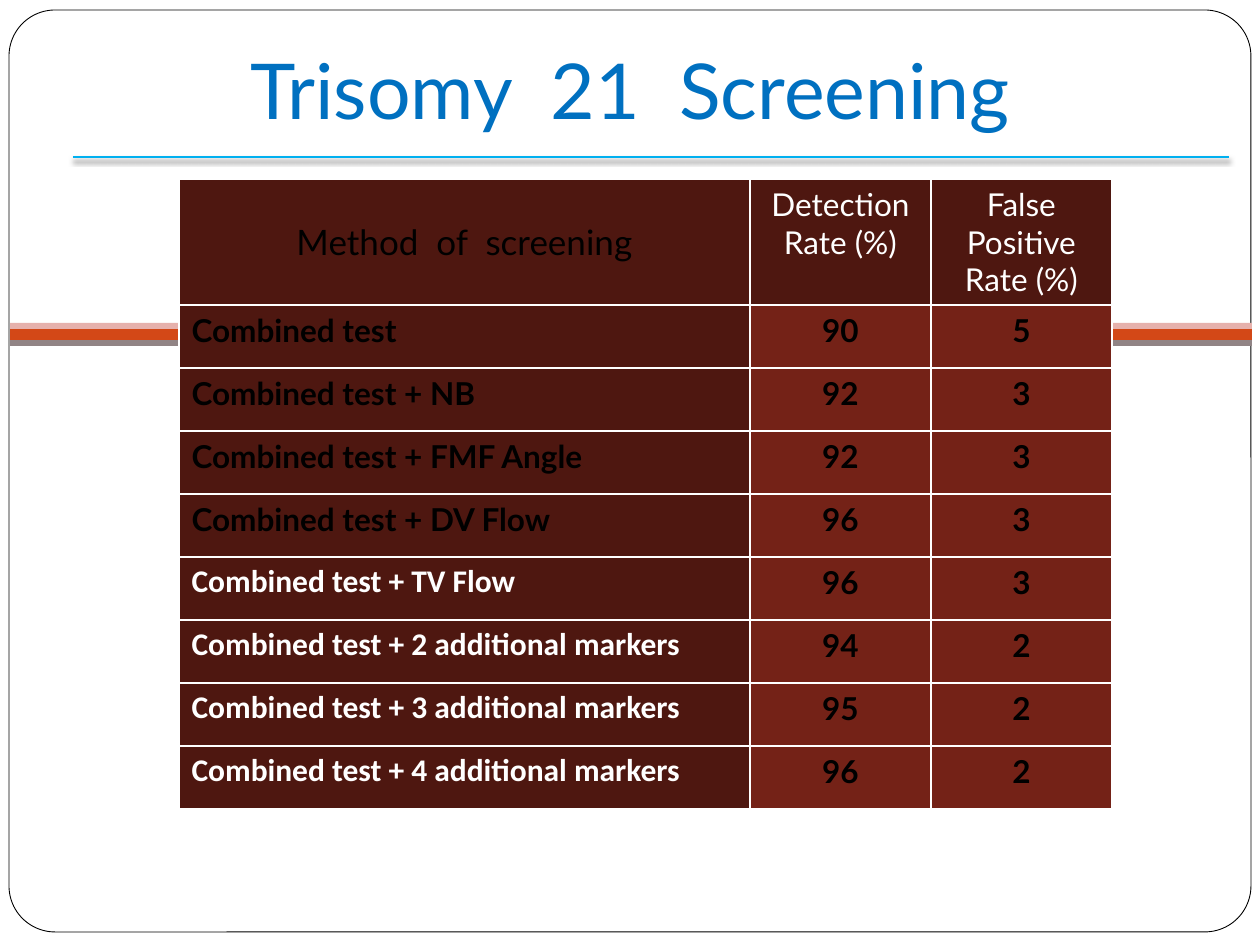
import pptx
import pptx.dml.color
import pptx.enum.shapes
import pptx.enum.text
import pptx.oxml
import pptx.oxml.ns
import pptx.util

RGBColor = pptx.dml.color.RGBColor
Pt = pptx.util.Pt
SHAPE = pptx.enum.shapes.MSO_SHAPE
ALIGN = pptx.enum.text.PP_ALIGN
ANCHOR = pptx.enum.text.MSO_ANCHOR

BLACK = RGBColor(0x00, 0x00, 0x00)
WHITE = RGBColor(0xFF, 0xFF, 0xFF)
BLUE = RGBColor(0x00, 0x70, 0xC0)
SKY = RGBColor(0x00, 0xB0, 0xF0)
ORANGE = RGBColor(0xD3, 0x48, 0x17)
PINK = RGBColor(0xE6, 0xB1, 0xAC)
GREY = RGBColor(0x91, 0x84, 0x85)
DARK = RGBColor(0x4E, 0x17, 0x10)
BROWN = RGBColor(0x74, 0x22, 0x17)

EMU_PER_PX = 914400 / 126
NS = pptx.oxml.ns.nsdecls("a")
SHADOW = (f'<a:effectLst {NS}><a:outerShdw blurRad="38100" dist="25400" dir="5400000" '
          'rotWithShape="0"><a:srgbClr val="000000"><a:alpha val="50000"/></a:srgbClr>'
          '</a:outerShdw></a:effectLst>')

TITLE = {"size": Pt(44), "name": "Lato", "bold": False, "color": BLUE}
HEADING = {"size": Pt(18), "name": "Lato", "bold": False, "color": WHITE}
FIRST_HEADING = {**HEADING, "size": Pt(20), "color": BLACK}
BODY = {**HEADING, "bold": True, "color": BLACK}
MARKER = {**BODY, "name": "Calibri", "color": WHITE}
CENTER = {"alignment": ALIGN.CENTER}
LEFT = {"alignment": ALIGN.LEFT}
TIGHT = {**LEFT, "line_spacing": 0.95, "space_after": Pt(0.7)}

HEADINGS = ["Method  of  screening", "Detection Rate (%)", "False Positive Rate (%)"]
RESULTS = [
    ("Combined test", 90, 5),
    ("Combined test + NB", 92, 3),
    ("Combined test + FMF Angle", 92, 3),
    ("Combined test + DV Flow", 96, 3),
    ("Combined test + TV Flow", 96, 3),
    ("Combined test + 2 additional markers", 94, 2),
    ("Combined test + 3 additional markers", 95, 2),
    ("Combined test + 4 additional markers", 96, 2),
]
FIRST_MARKER_ROW = 4


def px(n):
    return pptx.util.Emu(round(n * EMU_PER_PX))


class SlideBuilder:
    def __init__(self, prs):
        self.s = prs.slides.add_slide(prs.slide_layouts[5])

    def text(self, tf, text, font, paragraph):
        p = tf.paragraphs[0]
        for name, value in paragraph.items():
            setattr(p, name, value)
        r = p.add_run()
        r.text = text
        for name, value in font.items():
            if name == "color":
                r.font.color.rgb = value
            else:
                setattr(r.font, name, value)

    def shape(self, kind, box, fill, line=None):
        sp = self.s.shapes.add_shape(kind, *map(px, box))
        sp.shadow.inherit = False
        sp.fill.solid()
        sp.fill.fore_color.rgb = fill
        if line is None:
            sp.line.fill.background()
        else:
            sp.line.color.rgb = line
            sp.line.width = Pt(0.5)
        return sp

    def rule(self, x1, x2, y):
        line = self.s.shapes.add_connector(
            pptx.enum.shapes.MSO_CONNECTOR.STRAIGHT, px(x1), px(y), px(x2), px(y))
        line.line.color.rgb = SKY
        line.line.width = Pt(1)
        line._element.spPr.append(pptx.oxml.parse_xml(SHADOW))

    def title(self, box, text):
        sp = self.s.shapes.title
        for name, value in zip(("left", "top", "width", "height"), box):
            setattr(sp, name, px(value))
        tf = sp.text_frame
        tf.auto_size = pptx.enum.text.MSO_AUTO_SIZE.NONE
        tf.vertical_anchor = ANCHOR.BOTTOM
        tf.margin_bottom = pptx.util.Inches(0.1)
        self.text(tf, text, TITLE, CENTER)
        # The placeholder comes first; lift it above the filled frame.
        self.s.shapes._spTree.append(sp._element)

    def cell(self, cell, text, fill, font, paragraph):
        cell.fill.solid()
        cell.fill.fore_color.rgb = fill
        self.text(cell.text_frame, str(text), font, paragraph)
        # Borders have to stand before the fill in tcPr.
        for i, side in enumerate(("lnL", "lnR", "lnT", "lnB")):
            cell._tc.tcPr.insert(i, pptx.oxml.parse_xml(
                f'<a:{side} {NS} w="12700"><a:solidFill><a:srgbClr val="{WHITE}"/>'
                f'</a:solidFill></a:{side}>'))

    def table(self, left, top, widths, heights):
        frame = self.s.shapes.add_table(
            len(heights), len(widths), px(left), px(top), px(sum(widths)), px(sum(heights)))
        table = frame.table
        for column, width in zip(table.columns, widths):
            column.width = px(width)
        for row, height in zip(table.rows, heights):
            row.height = px(height)
        return table


def main():
    prs = pptx.Presentation()
    prs.slide_width, prs.slide_height = px(1260), px(945)
    b = SlideBuilder(prs)

    frame = b.shape(SHAPE.ROUNDED_RECTANGLE, (9, 10, 1242, 922), WHITE, BLACK)
    frame.adjustments[0] = 0.05
    for top, height, color in ((328, 12, ORANGE), (323, 6, PINK), (340, 6, GREY)):
        b.shape(SHAPE.RECTANGLE, (10, top, 1242, height), color)
    b.rule(73, 1229, 157)
    b.title((53, -40, 1155, 188), "Trisomy  21  Screening")

    table = b.table(179, 179, [571, 181, 181], [125] + [63] * len(RESULTS))
    for j, text in enumerate(HEADINGS):
        b.cell(table.cell(0, j), text, DARK, HEADING if j else FIRST_HEADING, CENTER)
    table.cell(0, 0).vertical_anchor = ANCHOR.MIDDLE
    for i, (method, *rates) in enumerate(RESULTS):
        style = (MARKER, TIGHT) if i >= FIRST_MARKER_ROW else (BODY, LEFT)
        b.cell(table.cell(i + 1, 0), method, DARK, *style)
        for j, rate in enumerate(rates, 1):
            b.cell(table.cell(i + 1, j), rate, BROWN, BODY, CENTER)

    prs.save("out.pptx")


if __name__ == "__main__":
    main()
